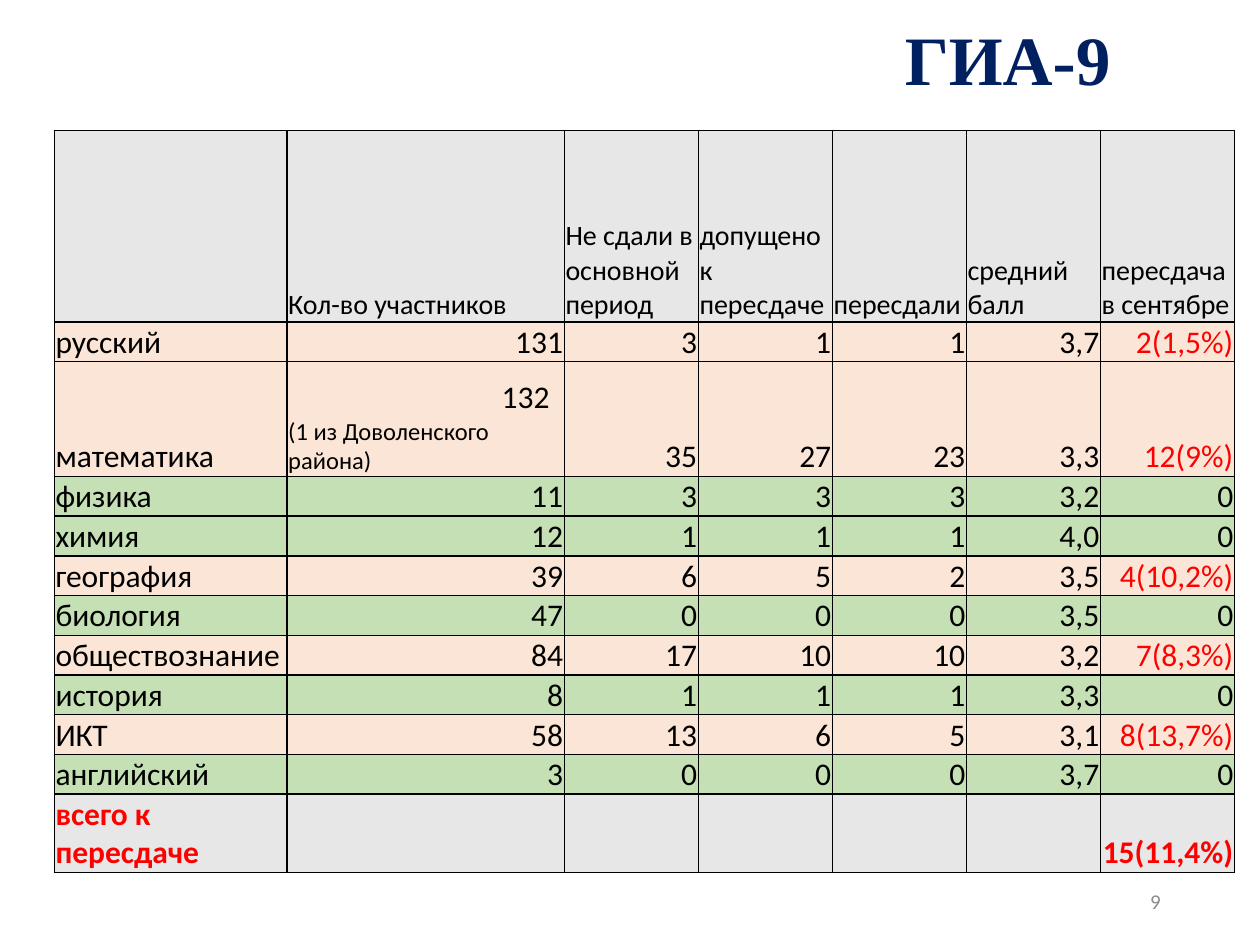
from dataclasses import dataclass

from lxml.etree import SubElement
from pptx import Presentation
from pptx.dml.color import RGBColor
from pptx.enum.text import MSO_ANCHOR, PP_ALIGN
from pptx.oxml.ns import qn
from pptx.util import Pt


@dataclass(frozen=True)
class Theme:
    """Colours, fonts and type sizes of the slide."""
    title_color: str = "002060"
    text_color: str = "000000"
    alert_color: str = "FF0000"
    number_color: str = "8C8C8C"
    neutral_fill: str = "E7E7E7"
    retake_fill: str = "FBE5D6"
    passed_fill: str = "C5E0B4"
    title_font: str = "Times New Roman"
    body_font: str = "Calibri"
    title_size: float = 39.6
    body_size: float = 18
    header_size: float = 16
    note_size: float = 14
    number_size: float = 12


THEME = Theme()
HEADERS = ["", "Кол-во участников", "Не сдали в основной период",
           "допущено к пересдаче", "пересдали", "средний\nбалл",
           "пересдача в сентябре"]
RESULTS = [
    ["русский", "131", "3", "1", "1", "3,7", "2(1,5%)"],
    ["математика", "132", "35", "27", "23", "3,3", "12(9%)"],
    ["физика", "11", "3", "3", "3", "3,2", "0"],
    ["химия", "12", "1", "1", "1", "4,0", "0"],
    ["география", "39", "6", "5", "2", "3,5", "4(10,2%)"],
    ["биология", "47", "0", "0", "0", "3,5", "0"],
    ["обществознание", "84", "17", "10", "10", "3,2", "7(8,3%)"],
    ["история", "8", "1", "1", "1", "3,3", "0"],
    ["ИКТ", "58", "13", "6", "5", "3,1", "8(13,7%)"],
    ["английский", "3", "0", "0", "0", "3,7", "0"],
]
TOTALS = ["всего к пересдаче", "", "", "", "", "", "15(11,4%)"]
MATHEMATICS_NOTE = "(1 из Доволенского района)"
COLUMN_WIDTHS = [133, 158.5] + [76.6] * 5
ROW_HEIGHTS = [109.4, 21.6, 65.5] + [21.6] * 8 + [39.6]


def add_run(paragraph, text, size, color, font=THEME.body_font, bold=False):
    """Add one formatted run to a paragraph."""
    run = paragraph.add_run()
    run.text = text
    run.font.name = font
    run.font.size = Pt(size)
    run.font.bold = bold
    run.font.color.rgb = RGBColor.from_string(color)


def style_cell(cell, fill):
    """Give a cell its margins, borders, anchor and fill."""
    cell.margin_left = cell.margin_right = cell.margin_top = Pt(0.72)
    cell.margin_bottom = Pt(0)
    cell.vertical_anchor = MSO_ANCHOR.BOTTOM
    properties = cell._tc.get_or_add_tcPr()
    for side in ("a:lnL", "a:lnR", "a:lnT", "a:lnB"):
        line = SubElement(properties, qn(side), w=str(Pt(1)))
        solid = SubElement(line, qn("a:solidFill"))
        SubElement(solid, qn("a:srgbClr"), val=THEME.text_color)
    cell.fill.solid()
    cell.fill.fore_color.rgb = RGBColor.from_string(fill)


def fill_row(row, texts, fill, size=THEME.body_size, numeric=True, total=False):
    """Style one table row and write its texts."""
    last = len(texts) - 1
    for index, (cell, text) in enumerate(zip(row.cells, texts)):
        style_cell(cell, fill)
        alert = total or (index == last and fill == THEME.retake_fill)
        color = THEME.alert_color if alert else THEME.text_color
        for number, line in enumerate(text.split("\n") if text else []):
            frame = cell.text_frame
            paragraph = frame.add_paragraph() if number else frame.paragraphs[0]
            right = numeric and index > 0
            paragraph.alignment = PP_ALIGN.RIGHT if right else PP_ALIGN.LEFT
            add_run(paragraph, line, size, color, bold=total)


def add_note(cell, note):
    """Indent the cell's number and put a small note under it."""
    number = cell.text_frame.paragraphs[0]
    number.alignment = PP_ALIGN.LEFT
    number._p.get_or_add_pPr().set("marL", str(Pt(122)))
    paragraph = cell.text_frame.add_paragraph()
    paragraph.alignment = PP_ALIGN.LEFT
    add_run(paragraph, note, THEME.note_size, THEME.text_color)


def add_results_table(slide, left, top, width, height):
    """Place the exam results table in the given box."""
    frame = slide.shapes.add_table(len(ROW_HEIGHTS), len(COLUMN_WIDTHS),
                                   left, top, width, height)
    table = frame.table
    table.first_row = table.horz_banding = False
    for column, column_width in zip(table.columns, COLUMN_WIDTHS):
        column.width = Pt(column_width)
    for row, row_height in zip(table.rows, ROW_HEIGHTS):
        row.height = Pt(row_height)
    header, *subjects, total = table.rows
    fill_row(header, HEADERS, THEME.neutral_fill, THEME.header_size, numeric=False)
    for row, texts in zip(subjects, RESULTS):
        fill = THEME.passed_fill if texts[-1] == "0" else THEME.retake_fill
        fill_row(row, texts, fill)
    fill_row(total, TOTALS, THEME.neutral_fill, total=True)
    add_note(table.cell(2, 1), MATHEMATICS_NOTE)


def place_title(slide, left, top, width, height):
    """Move the title placeholder to the given box and write the title."""
    title = slide.shapes.title
    title.left, title.top, title.width, title.height = left, top, width, height
    title.text_frame.vertical_anchor = MSO_ANCHOR.MIDDLE
    paragraph = title.text_frame.paragraphs[0]
    paragraph.alignment = PP_ALIGN.LEFT
    paragraph.line_spacing = 0.9
    add_run(paragraph, "ГИА-9", THEME.title_size, THEME.title_color,
            THEME.title_font, bold=True)


def add_page_number(slide, left, top, width, height):
    """Place the page number in the given box."""
    frame = slide.shapes.add_textbox(left, top, width, height).text_frame
    frame.word_wrap = True
    frame.vertical_anchor = MSO_ANCHOR.MIDDLE
    paragraph = frame.paragraphs[0]
    paragraph.alignment = PP_ALIGN.RIGHT
    add_run(paragraph, "9", THEME.number_size, THEME.number_color)


def main():
    """Build the slide and save it."""
    presentation = Presentation()
    presentation.slide_width, presentation.slide_height = Pt(720), Pt(540)
    slide = presentation.slides.add_slide(presentation.slide_layouts[5])
    place_title(slide, Pt(509.8), Pt(15), Pt(173.5), Pt(42.5))
    add_results_table(slide, Pt(31), Pt(74.6),
                      Pt(sum(COLUMN_WIDTHS)), Pt(sum(ROW_HEIGHTS)))
    add_page_number(slide, Pt(508.3), Pt(500.5), Pt(162), Pt(28.8))
    presentation.save("out.pptx")


if __name__ == "__main__":
    main()
